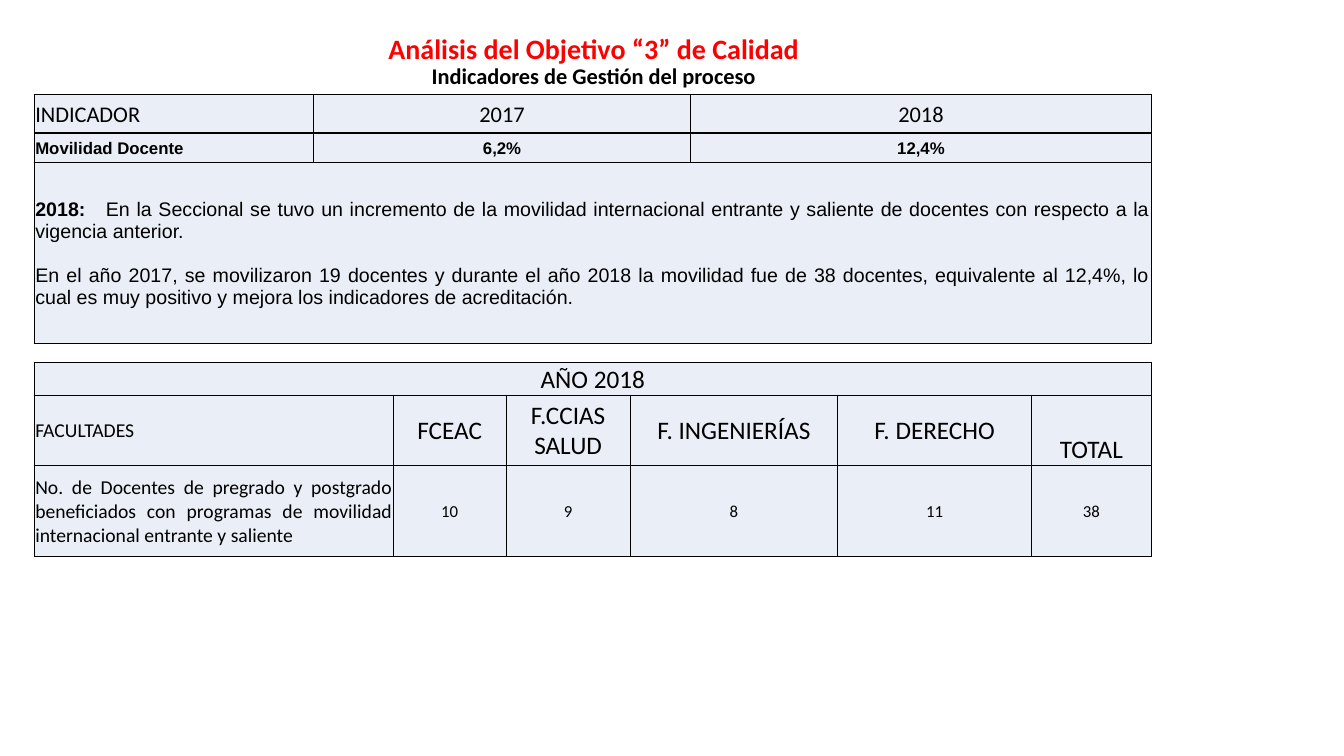
import pptx
import pptx.dml.color
import pptx.enum.text
import pptx.oxml
import pptx.oxml.ns
import pptx.util

Inches = pptx.util.Inches
Pt = pptx.util.Pt
RGBColor = pptx.dml.color.RGBColor
ALIGN = pptx.enum.text.PP_ALIGN
ANCHOR = pptx.enum.text.MSO_ANCHOR

RED = RGBColor(0xFF, 0x00, 0x00)
BLACK = RGBColor(0x00, 0x00, 0x00)
PALE_BLUE = RGBColor(0xEA, 0xEF, 0xF7)

HEADING = [
    ("Análisis del Objetivo “3” de Calidad", 20, RED),
    ("Indicadores de Gestión del proceso", 16, BLACK),
]
HEADING_BOX = (0.46, 0.25, 10.86, 0.69)

ANALYSIS = [
    [("2018:", True),
     ("\tEn la Seccional se tuvo un incremento de la movilidad internacional entrante y saliente "
      "de docentes con respecto a la vigencia anterior.", False)],
    [("En el año 2017, se movilizaron 19 docentes y durante el año 2018 la movilidad fue de "
      "38 docentes, equivalente al 12,4%, lo cual es muy positivo y mejora los indicadores "
      "de acreditación.", False)],
]
ANALYSIS_TAB = 0.7

INDICATORS = {
    "origin": (0.34, 0.94),
    "columns": [2.77, 3.74, 4.57],
    "rows": [0.38, 0.29, 1.8],
    "font": "Calibri",
    "cells": [
        ["INDICADOR", "2017", "2018"],
        ["Movilidad Docente", "6,2%", "12,4%"],
        [ANALYSIS],
    ],
    "sizes": [(16, 16), (12, 12), (14, 14)],
    "fonts": ["Calibri", "Arial", "Arial"],
    "bold": [False, True, False],
    "first_align": [ALIGN.LEFT, ALIGN.LEFT, ALIGN.JUSTIFY],
    "bottom": [],
}
FACULTIES = {
    "origin": (0.34, 3.6),
    "columns": [3.56, 1.12, 1.23, 2.06, 1.92, 1.19],
    "rows": [0.32, 0.7, 0.9],
    "cells": [
        ["AÑO 2018"],
        ["FACULTADES", "FCEAC", "F.CCIAS SALUD", "F. INGENIERÍAS", "F. DERECHO", "TOTAL"],
        ["No. de Docentes de pregrado y postgrado beneficiados con programas de movilidad "
         "internacional entrante y saliente", "10", "9", "8", "11", "38"],
    ],
    "sizes": [(18, 18), (14, 18), (14, 12)],
    "fonts": ["Calibri"] * 3,
    "bold": [False] * 3,
    "first_align": [ALIGN.CENTER, ALIGN.JUSTIFY, ALIGN.JUSTIFY],
    "bottom": ["AÑO 2018", "TOTAL"],
}

CELL_FORMAT = {
    "margin_left": Inches(0.01),
    "margin_right": Inches(0.01),
    "margin_top": Inches(0.01),
    "margin_bottom": 0,
}


def apply(target, values):
    for name, value in values.items():
        setattr(target, name, value)


def add_run(paragraph, text, size, font, bold, color=BLACK):
    run = paragraph.add_run()
    run.text = text
    apply(run.font, {"size": Pt(size), "name": font, "bold": bold})
    run.font.color.rgb = color


def style_cell(cell):
    apply(cell, CELL_FORMAT)
    properties = cell._tc.get_or_add_tcPr()
    for side in ("lnL", "lnR", "lnT", "lnB"):
        properties.append(pptx.oxml.parse_xml(
            f'<a:{side} {pptx.oxml.ns.nsdecls("a")} w="{Pt(1)}"><a:solidFill>'
            f'<a:srgbClr val="{BLACK}"/></a:solidFill></a:{side}>'))
    cell.fill.solid()
    cell.fill.fore_color.rgb = PALE_BLUE


def add_tab_stop(paragraph, position):
    paragraph._p.get_or_add_pPr().append(pptx.oxml.parse_xml(
        f'<a:tabLst {pptx.oxml.ns.nsdecls("a")}>'
        f'<a:tab pos="{Inches(position)}" algn="l"/></a:tabLst>'))


def fill_cell(cell, content, align, size, font, bold):
    paragraphs = [[(content, bold)]] if isinstance(content, str) else content
    for index, runs in enumerate(paragraphs):
        frame = cell.text_frame
        paragraph = frame.add_paragraph() if index else frame.paragraphs[0]
        paragraph.alignment = align
        if index:
            paragraph.space_before = Pt(16)
        if any("\t" in text for text, _ in runs):
            add_tab_stop(paragraph, ANALYSIS_TAB)
        for text, run_bold in runs:
            add_run(paragraph, text, size, font, run_bold)


def add_grid(slide, data):
    columns, rows = data["columns"], data["rows"]
    left, top = data["origin"]
    grid = slide.shapes.add_table(
        len(rows), len(columns), Inches(left), Inches(top),
        Inches(sum(columns)), Inches(sum(rows))).table
    apply(grid, {"first_row": False, "horz_banding": False})
    for column, width in zip(grid.columns, columns):
        column.width = Inches(width)
    for row, height in zip(grid.rows, rows):
        row.height = Inches(height)
    for cell in grid.iter_cells():
        style_cell(cell)
    for r, contents in enumerate(data["cells"]):
        if len(contents) == 1:
            grid.cell(r, 0).merge(grid.cell(r, len(columns) - 1))
        for c, content in enumerate(contents):
            cell = grid.cell(r, c)
            cell.vertical_anchor = ANCHOR.BOTTOM if content in data["bottom"] else ANCHOR.MIDDLE
            align = ALIGN.CENTER if c else data["first_align"][r]
            size = data["sizes"][r][min(c, 1)]
            fill_cell(cell, content, align, size, data["fonts"][r], data["bold"][r])


def main():
    deck = pptx.Presentation()
    apply(deck, {"slide_width": Inches(13.33), "slide_height": Inches(7.5)})
    slide = deck.slides.add_slide(deck.slide_layouts[6])

    heading = slide.shapes.add_textbox(*map(Inches, HEADING_BOX)).text_frame
    apply(heading, {"word_wrap": True, "vertical_anchor": ANCHOR.BOTTOM})
    for index, (text, size, color) in enumerate(HEADING):
        paragraph = heading.add_paragraph() if index else heading.paragraphs[0]
        apply(paragraph, {"alignment": ALIGN.CENTER, "line_spacing": 0.9})
        add_run(paragraph, text, size, "Calibri", True, color)

    for data in (INDICATORS, FACULTIES):
        add_grid(slide, data)
    deck.save("out.pptx")


if __name__ == "__main__":
    main()
